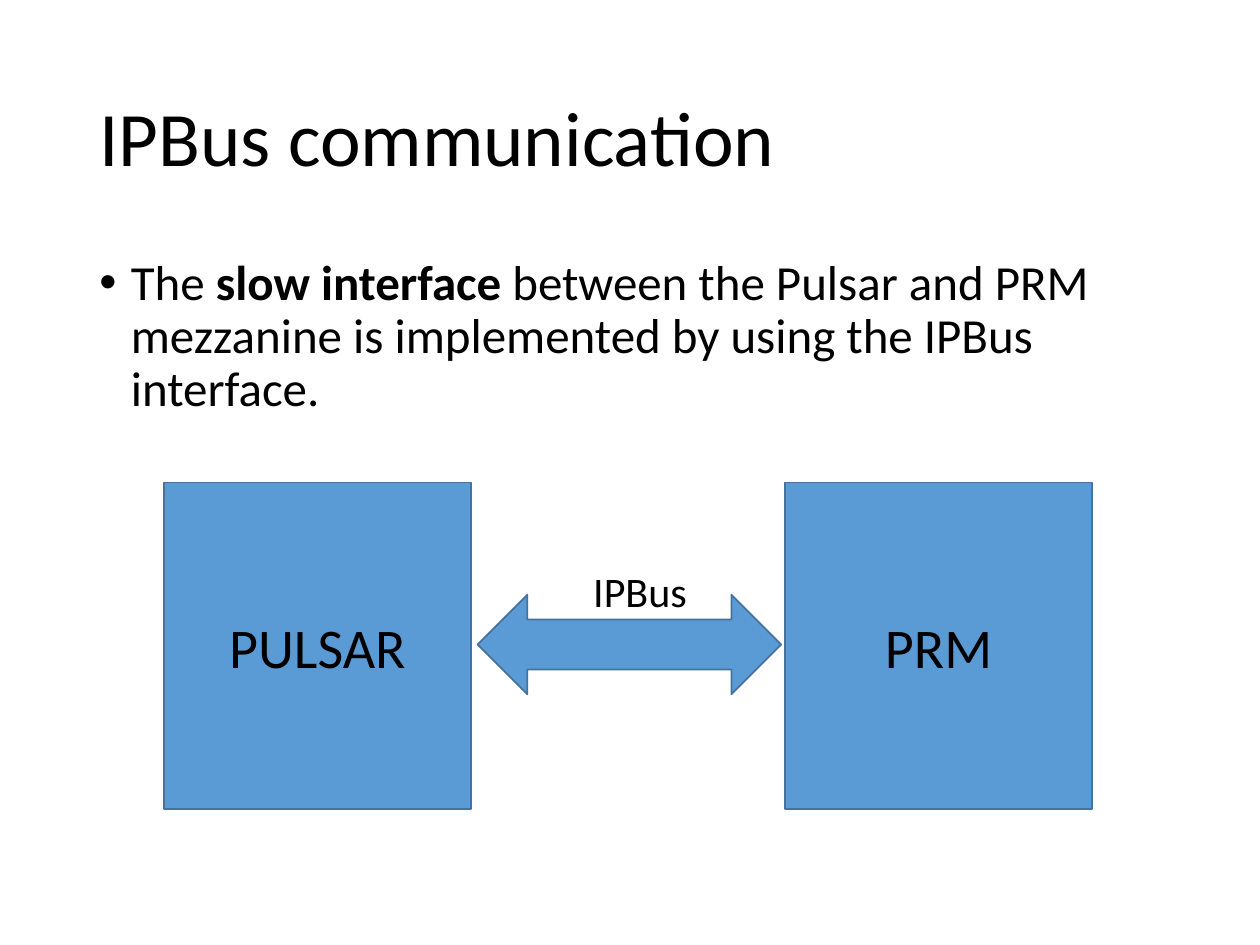
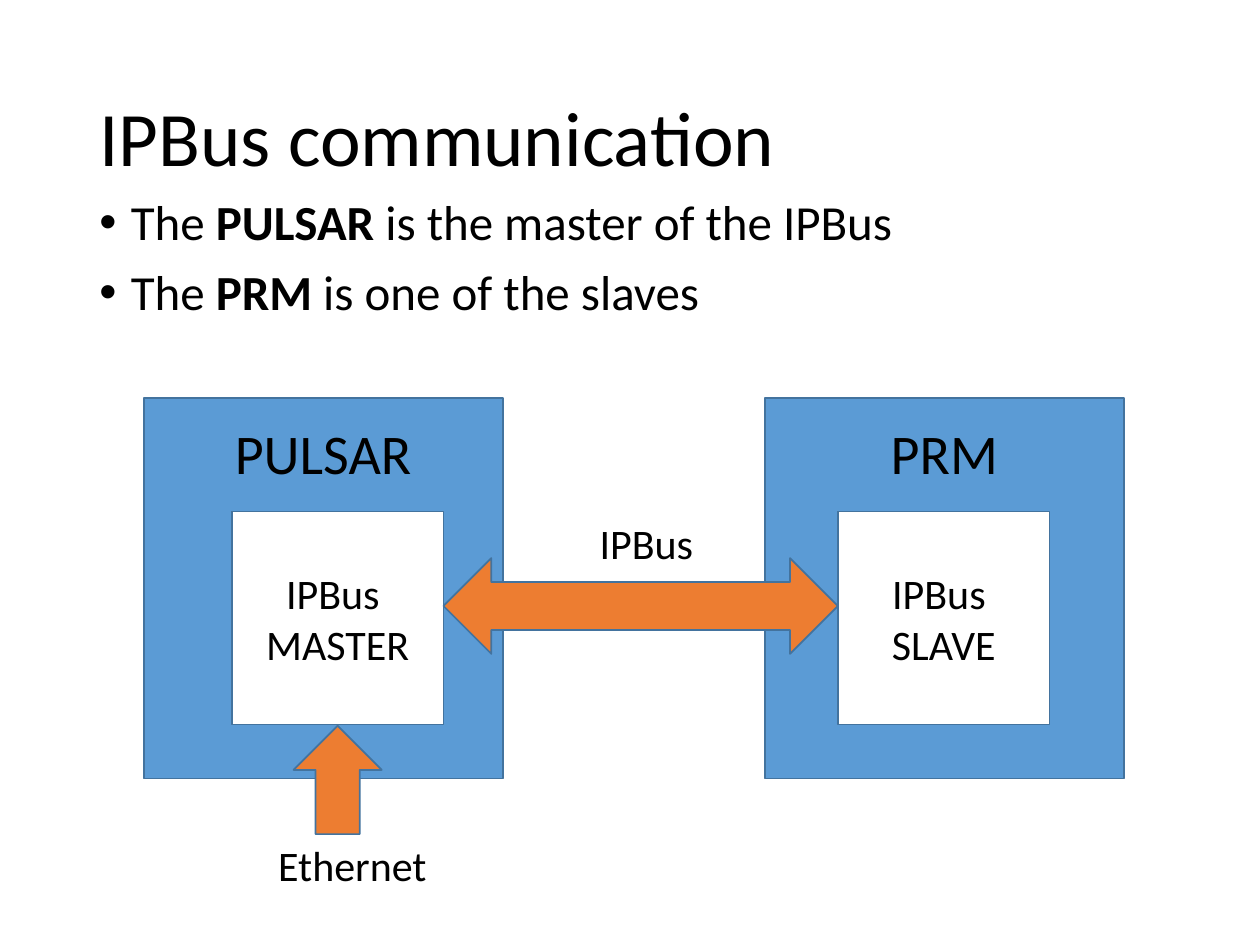
from pptx import Presentation
from pptx.dml.color import RGBColor
from pptx.enum.shapes import MSO_SHAPE as SHAPE
from pptx.enum.text import MSO_ANCHOR as ANCHOR, PP_ALIGN as ALIGN
from pptx.util import Inches, Pt
from lxml import etree

FONT = "Calibri"
BLACK, WHITE, BLUE, ORANGE, EDGE = "000000", "FFFFFF", "5B9BD5", "ED7D31", "43739E"
NS = "http://schemas.openxmlformats.org/drawingml/2006/main"


def write(sp, text, size=24, align=ALIGN.LEFT, anchor=ANCHOR.TOP, top=0.05,
          spacing=None, bullet=False):
    """Fill a shape with text: one paragraph a line, bold between asterisks."""
    tf = sp.text_frame
    tf.word_wrap = True
    tf.vertical_anchor = anchor
    tf.margin_top = Inches(top)
    for i, line in enumerate(text.split("\n")):
        p = tf.paragraphs[0] if i == 0 else tf.add_paragraph()
        p.alignment = align
        if spacing:
            p.line_spacing = spacing
        if bullet:
            if i:
                p.space_before = Pt(10)
            pPr = p._p.get_or_add_pPr()
            pPr.set("marL", str(Inches(0.25)))
            pPr.set("indent", str(-Inches(0.25)))
            etree.SubElement(pPr, f"{{{NS}}}buFont", typeface="Arial")
            etree.SubElement(pPr, f"{{{NS}}}buChar", char="•")
        for j, part in enumerate(line.split("*")):
            r = p.add_run()
            r.text = part
            r.font.name = FONT
            r.font.size = Pt(size)
            r.font.bold = j % 2 == 1
            r.font.color.rgb = RGBColor.from_string(BLACK)


def add(s, box, kind=None, fill=BLUE):
    """Add a filled shape, or a text box when no kind is given."""
    box = [Inches(v) for v in box]
    if kind is None:
        return s.shapes.add_textbox(*box)
    sp = s.shapes.add_shape(kind, *box)
    sp.shadow.inherit = False
    sp.fill.solid()
    sp.fill.fore_color.rgb = RGBColor.from_string(fill)
    sp.line.color.rgb = RGBColor.from_string(EDGE)
    sp.line.width = Pt(1)
    return sp


prs = Presentation()
prs.slide_width, prs.slide_height = Inches(10), Inches(7.5)

# Title and bullets of both slides
slides = []
for top, height, bullets in [
    (2, 4.76, "The *slow interface* between the Pulsar and PRM mezzanine "
              "is implemented by using the IPBus interface."),
    (1.52, 5.23, "The *PULSAR *is the master of the IPBus\n"
                 "The *PRM *is one of the slaves"),
]:
    s = prs.slides.add_slide(prs.slide_layouts[6])
    write(add(s, (0.69, 0.4, 8.62, 1.45)), "IPBus communication", size=44,
          anchor=ANCHOR.MIDDLE, spacing=0.9)
    write(add(s, (0.69, top, 8.62, height)), bullets, size=28, spacing=0.9, bullet=True)
    slides.append(s)
overview, detail = slides

# Slide 1: two boards joined by the bus
for x, board in [(1.3, "PULSAR"), (6.23, "PRM")]:
    write(add(overview, (x, 3.83, 2.44, 2.59), SHAPE.RECTANGLE), board, size=32,
          align=ALIGN.CENTER, anchor=ANCHOR.MIDDLE)
add(overview, (3.79, 4.72, 2.41, 0.79), SHAPE.LEFT_RIGHT_ARROW)
write(add(overview, (4.61, 4.44, 0.98, 0.5)), "IPBus")

# Slide 2: boards with the master and slave blocks inside
for x, board, block_x, role in [(1.14, "PULSAR", 1.84, "MASTER"),
                                (6.07, "PRM", 6.65, "SLAVE")]:
    write(add(detail, (x, 3.16, 2.85, 3.02), SHAPE.RECTANGLE), board, size=32,
          align=ALIGN.CENTER, top=0.16)
    write(add(detail, (block_x, 4.06, 1.68, 1.69), SHAPE.RECTANGLE, WHITE),
          f"IPBus \n{role}", align=ALIGN.CENTER, anchor=ANCHOR.MIDDLE)

# Slide 2: bus and Ethernet arrows with labels
add(detail, (3.52, 4.43, 3.13, 0.76), SHAPE.LEFT_RIGHT_ARROW, ORANGE)
write(add(detail, (4.66, 4.06, 1.15, 0.5)), "IPBus")
add(detail, (2.25, 5.84, 0.86, 0.7), SHAPE.RIGHT_ARROW, ORANGE).rotation = 270
write(add(detail, (2.11, 6.61, 1.88, 0.5)), "Ethernet")

prs.save("out.pptx")
